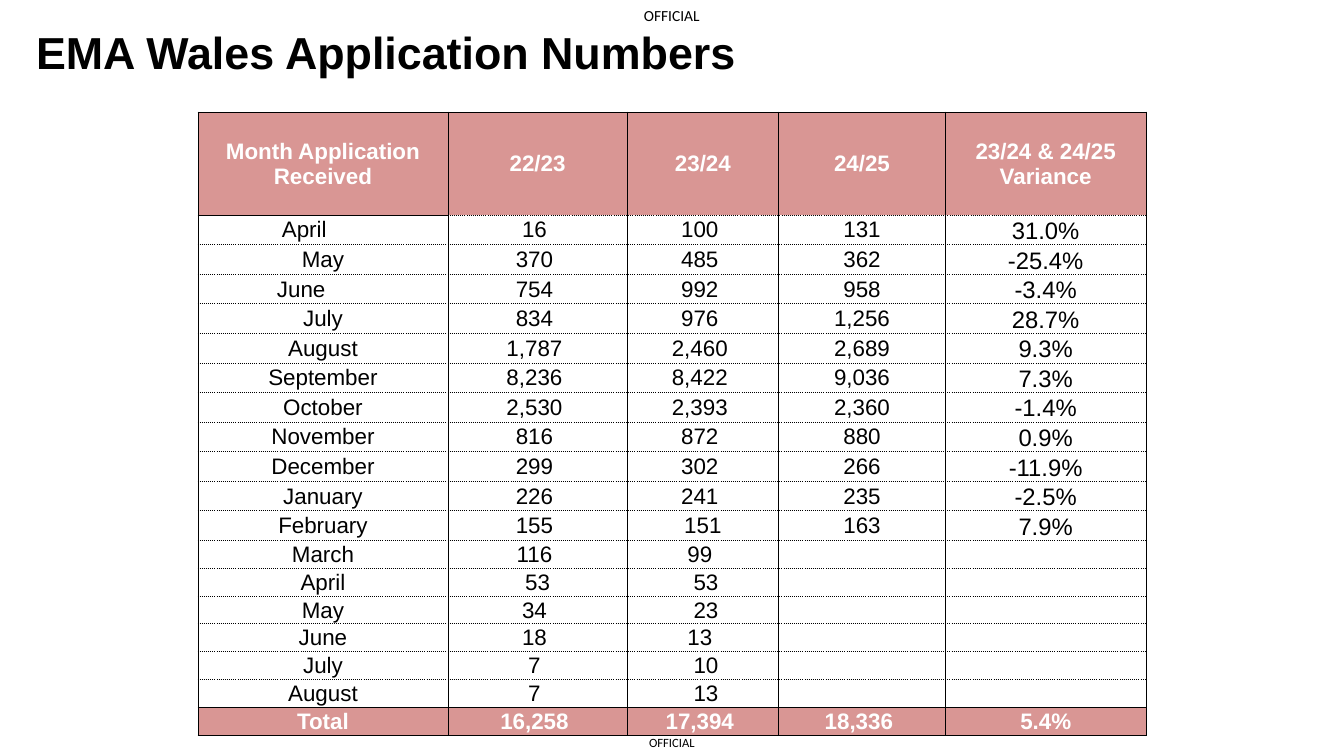
import pptx
import pptx.dml.color
import pptx.enum.text
import pptx.oxml.ns
import pptx.util
from lxml import etree

Pt = pptx.util.Pt
RGBColor = pptx.dml.color.RGBColor
ANCHOR = pptx.enum.text.MSO_ANCHOR
ALIGN = pptx.enum.text.PP_ALIGN
qn = pptx.oxml.ns.qn

BLACK = RGBColor(0x00, 0x00, 0x00)
WHITE = RGBColor(0xFF, 0xFF, 0xFF)
ROSE = RGBColor(0xD9, 0x96, 0x94)

HEADINGS = ["Month Application Received", "22/23", "23/24", "24/25",
            "23/24 & 24/25 Variance"]
MONTHS = [
    ["April", "16 ", "100 ", "131", "31.0%"],
    ["May", "370 ", "485 ", "362", "-25.4%"],
    ["June", "754 ", "992 ", "958", "-3.4%"],
    ["July", "834 ", "976 ", "1,256", "28.7%"],
    ["August", "1,787 ", "2,460 ", "2,689", "9.3%"],
    ["September", "8,236 ", "8,422 ", "9,036", "7.3%"],
    ["October", "2,530 ", "2,393 ", "2,360", "-1.4%"],
    ["November", "816 ", "872 ", "880", "0.9%"],
    ["December", "299 ", "302 ", "266", "-11.9%"],
    ["January", "226 ", "241 ", "235", "-2.5%"],
    ["February", "155 ", "151", "163", "7.9%"],
    ["March", "116 ", "99 ", "", ""],
    ["April", "53", " 53", "", ""],
    ["May", "34 ", " 23", "", ""],
    ["June", "18 ", "13 ", "", ""],
    ["July", "7 ", " 10", "", ""],
    ["August", "7 ", " 13", "", ""],
]
TOTALS = ["Total", "16,258 ", "17,394 ", "18,336 ", "5.4%"]
COLUMN_WIDTHS = [178.6, 128, 108.2, 119.1, 143.4]
HEADER_HEIGHT, FULL_HEIGHT, PARTIAL_HEIGHT, TOTAL_HEIGHT = 73.6, 20.95, 19.9, 20
# Right indents that move two month names left of centre, by row
MONTH_INDENTS = {1: 26.7, 3: 31.1}


class SlideBuilder:
    font_name = "Arial"
    text_size = 16
    variance_size = 17
    border_width = 0.5

    def __init__(self, slide):
        self.slide = slide

    def style(self, paragraph, size, color=BLACK, bold=False, name=None):
        font = paragraph.font
        font.name = name or self.font_name
        font.size = Pt(size)
        font.bold = bold
        font.color.rgb = color

    def text(self, words, left, top, width, height, size, bold=False,
             name=None, label=False):
        shape = self.slide.shapes.add_textbox(
            Pt(left), Pt(top), Pt(width), Pt(height))
        frame = shape.text_frame
        frame.word_wrap = label
        frame.auto_size = pptx.enum.text.MSO_AUTO_SIZE.SHAPE_TO_FIT_TEXT
        paragraph = frame.paragraphs[0]
        if label:
            frame.margin_left = frame.margin_right = 0
            frame.margin_top = frame.margin_bottom = 0
            frame.vertical_anchor = ANCHOR.MIDDLE
            paragraph.alignment = ALIGN.CENTER
        paragraph.text = words
        self.style(paragraph, size, bold=bold, name=name)

    def border(self, cell, side, dash):
        properties = cell._tc.get_or_add_tcPr()
        line = etree.SubElement(properties, qn("a:ln" + side),
                                w=str(Pt(self.border_width)))
        fill = etree.SubElement(line, qn("a:solidFill"))
        etree.SubElement(fill, qn("a:srgbClr"), val=str(BLACK))
        etree.SubElement(line, qn("a:prstDash"), val=dash)

    def cell(self, cell, words, size, band, anchor, top, bottom, indent=0):
        cell.margin_left = cell.margin_top = Pt(0.7)
        cell.margin_right = Pt(0.7 + indent)
        cell.margin_bottom = 0
        cell.vertical_anchor = anchor
        for side, dash in zip("LRTB", ("solid", "solid", top, bottom)):
            self.border(cell, side, dash)
        if band:
            cell.fill.solid()
            cell.fill.fore_color.rgb = ROSE
        else:
            cell.fill.background()
        paragraph = cell.text_frame.paragraphs[0]
        paragraph.alignment = ALIGN.CENTER
        if words:
            paragraph.text = words
        else:
            # Keeps an empty cell from stretching its row
            etree.SubElement(paragraph._p, qn("a:endParaRPr"),
                             sz=str(size * 100))
        self.style(paragraph, size, WHITE if band else BLACK, band)

    def table(self, left, top, rows, widths, heights):
        table = self.slide.shapes.add_table(
            len(rows), len(widths), Pt(left), Pt(top),
            Pt(sum(widths)), Pt(sum(heights))).table
        table.first_row = table.horz_banding = False
        for column, width in zip(table.columns, widths):
            column.width = Pt(width)
        for row, height in zip(table.rows, heights):
            row.height = Pt(height)

        last = len(rows) - 1

        def edge(number, column):
            """Dash of the rule above the given row."""
            solid = number in (0, last, last + 1) or (number, column) == (1, 0)
            return "solid" if solid else "dot"

        for number, row in enumerate(rows):
            band = number in (0, last)
            for column, words in enumerate(row):
                variance = column == len(widths) - 1 and words and not band
                self.cell(
                    table.cell(number, column), words,
                    self.variance_size if variance else self.text_size, band,
                    ANCHOR.BOTTOM if variance else ANCHOR.MIDDLE,
                    edge(number, column), edge(number + 1, column),
                    MONTH_INDENTS.get(number, 0) if column == 0 else 0)


def main():
    presentation = pptx.Presentation()
    presentation.slide_width = Pt(960)
    presentation.slide_height = Pt(540)
    builder = SlideBuilder(
        presentation.slides.add_slide(presentation.slide_layouts[6]))

    # Classification labels
    builder.text("OFFICIAL", 453.6, 520.5, 52.6, 19.5, 9,
                 name="Calibri", label=True)
    builder.text("OFFICIAL", 448.6, 0, 62.6, 22.3, 11,
                 name="Calibri", label=True)

    # Title
    builder.text("EMA Wales Application Numbers", 18.7, 14.4, 518.4, 46,
                 32, bold=True)

    # Application numbers by month
    heights = [HEADER_HEIGHT]
    heights += [FULL_HEIGHT if row[-1] else PARTIAL_HEIGHT for row in MONTHS]
    heights.append(TOTAL_HEIGHT)
    builder.table(141.4, 80, [HEADINGS, *MONTHS, TOTALS],
                  COLUMN_WIDTHS, heights)

    presentation.save("out.pptx")


if __name__ == "__main__":
    main()
